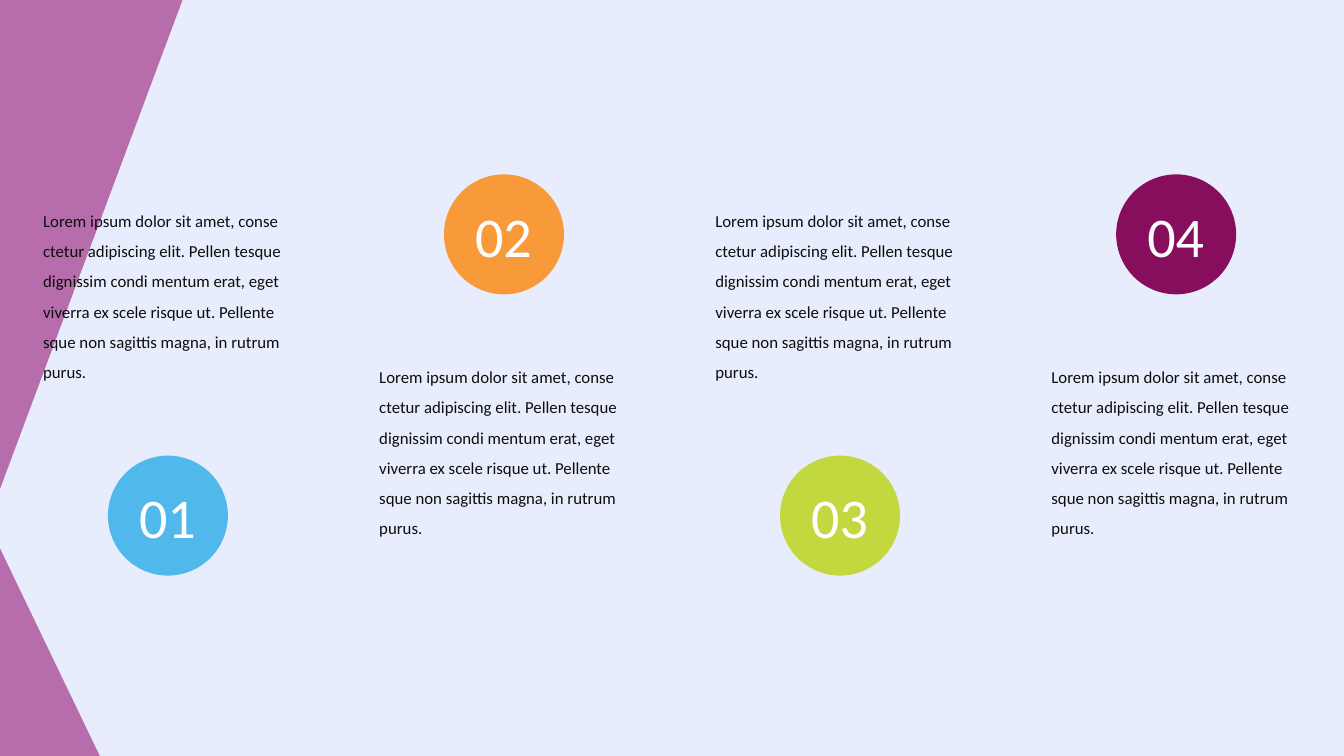
from dataclasses import dataclass

from pptx import Presentation
from pptx.dml.color import RGBColor
from pptx.enum import shapes, text
from pptx.oxml.ns import qn
from pptx.util import Inches, Pt


@dataclass(frozen=True)
class Theme:
    background: str = "E7EDFD"
    corner: str = "B76CAB"
    body: str = "0D0D0D"
    number: str = "FFFFFF"
    steps: tuple = ("51B8EB", "F89A3A", "C3D83F", "870E5D")
    font: str = "Calibri"
    body_size: int = 12
    number_size: int = 40


THEME = Theme()
COLUMN_PITCH = 10 / 3
CIRCLE_SIZE = 1.19
DESCRIPTION = (
    "Lorem ipsum dolor sit amet, conse ctetur adipiscing elit. "
    "Pellen tesque dignissim condi mentum erat, eget viverra ex scele risque ut. "
    "Pellente sque non sagittis magna, in rutrum purus."
)


def add_filled_shape(slide, preset, left, top, width, height, color):
    shape = slide.shapes.add_shape(
        preset, Inches(left), Inches(top), Inches(width), Inches(height))
    shape.shadow.inherit = False
    shape.fill.solid()
    shape.fill.fore_color.rgb = RGBColor.from_string(color)
    shape.line.fill.background()
    return shape


def add_label(slide, wording, left, top, width, height, size, color,
              align=text.PP_ALIGN.LEFT, line_spacing=1.0):
    label = slide.shapes.add_textbox(
        Inches(left), Inches(top), Inches(width), Inches(height))
    frame = label.text_frame
    frame.word_wrap = True
    frame.auto_size = text.MSO_AUTO_SIZE.SHAPE_TO_FIT_TEXT
    frame.text = wording
    paragraph = frame.paragraphs[0]
    paragraph.alignment = align
    paragraph.line_spacing = line_spacing
    font = paragraph.runs[0].font
    font.name = THEME.font
    font.size = Pt(size)
    font.color.rgb = RGBColor.from_string(color)


def add_corners(slide):
    triangle = shapes.MSO_SHAPE.RIGHT_TRIANGLE
    add_filled_shape(slide, triangle, 0, 5.44, 1, 2.08, THEME.corner)
    upper = add_filled_shape(slide, triangle, 0, 0, 1.81, 4.85, THEME.corner)
    upper.rotation = 180
    upper._element.spPr.find(qn("a:xfrm")).set("flipH", "1")


def add_step(slide, index, color):
    """Add one column; even columns put the circle below, odd ones above."""
    offset = index * COLUMN_PITCH
    circle_top, description_top = (1.73, 3.49) if index % 2 else (4.52, 1.94)
    circle_left = 1.07 + offset
    add_filled_shape(slide, shapes.MSO_SHAPE.OVAL, circle_left, circle_top,
                     CIRCLE_SIZE, CIRCLE_SIZE, color)
    add_label(slide, DESCRIPTION, 0.33 + offset, description_top, 2.66, 1.89,
              THEME.body_size, THEME.body, line_spacing=1.5)
    add_label(slide, f"{index + 1:02}", circle_left, circle_top + 0.22, 1.18, 0.77,
              THEME.number_size, THEME.number, align=text.PP_ALIGN.CENTER)


def main():
    deck = Presentation()
    deck.slide_width = Inches(13.33)
    deck.slide_height = Inches(7.5)
    slide = deck.slides.add_slide(deck.slide_layouts[6])
    slide.background.fill.solid()
    slide.background.fill.fore_color.rgb = RGBColor.from_string(THEME.background)
    add_corners(slide)
    for index, color in enumerate(THEME.steps):
        add_step(slide, index, color)
    deck.save("out.pptx")


if __name__ == "__main__":
    main()
